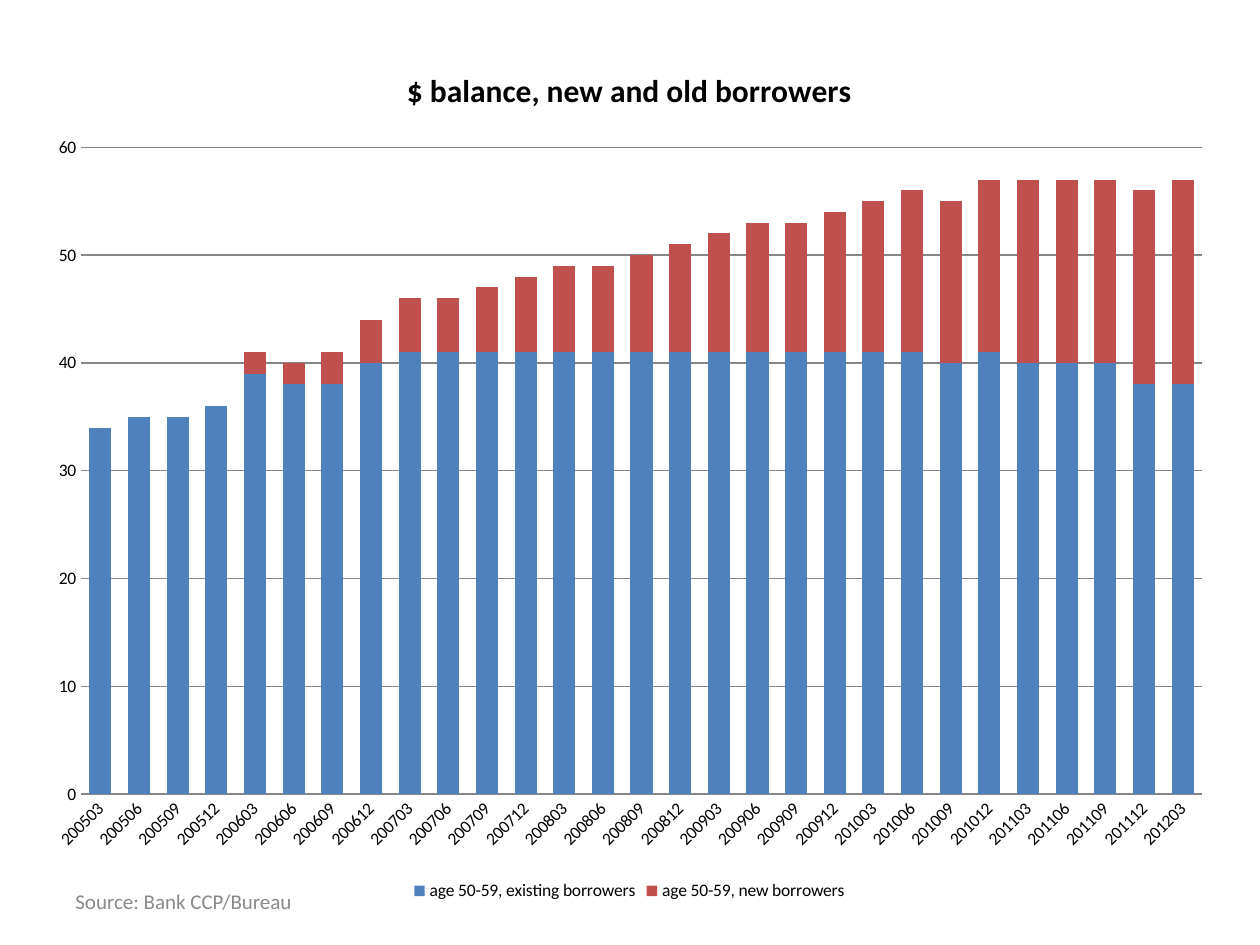
from typing import NamedTuple, Optional

from pptx import Presentation
from pptx.chart.data import CategoryChartData
from pptx.dml.color import RGBColor
from pptx.enum.chart import XL_CHART_TYPE as ChartType
from pptx.enum.chart import XL_LEGEND_POSITION as LegendPosition
from pptx.enum.chart import XL_TICK_MARK as TickMark
from pptx.enum.text import MSO_ANCHOR as Anchor
from pptx.util import Inches, Pt

FONT = "Calibri"
BLACK = RGBColor(0x00, 0x00, 0x00)
GREY = RGBColor(0x89, 0x89, 0x89)
AXIS_GREY = RGBColor(0x86, 0x86, 0x86)
BLUE = RGBColor(0x4F, 0x81, 0xBD)
RED = RGBColor(0xC0, 0x50, 0x4D)


class Borrowers(NamedTuple):
    name: str
    balances: list[Optional[int]]
    color: RGBColor


# Quarter ends from March 2005 to March 2012
QUARTERS = [f"{year}{month:02}" for year in range(2005, 2013)
            for month in (3, 6, 9, 12)][:29]

GROUPS = [
    Borrowers("age 50-59, existing borrowers",
              [34, 35, 35, 36, 39, 38, 38, 40] + [41] * 14
              + [40, 41, 40, 40, 40, 38, 38], BLUE),
    Borrowers("age 50-59, new borrowers",
              [None] * 4 + [2, 2, 3, 4, 5, 5, 6, 7, 8, 8, 9, 10, 11, 12, 12,
                            13, 14, 15, 15, 16, 17, 17, 17, 18, 19], RED),
]


def write(frame, text: str, *, size: float, color: RGBColor = BLACK,
          bold: bool = False) -> None:
    run = frame.paragraphs[0].add_run()
    run.text = text
    run.font.name = FONT
    run.font.size = Pt(size)
    run.font.bold = bold
    run.font.color.rgb = color


def add_source(slide, text: str) -> None:
    source = slide.shapes.add_textbox(Inches(0.5), Inches(6.95),
                                      Inches(2.33), Inches(0.4))
    source.text_frame.word_wrap = True
    source.text_frame.vertical_anchor = Anchor.MIDDLE
    write(source.text_frame, text, size=12, color=GREY)


def add_balance_chart(slide, title: str, groups: list[Borrowers]) -> None:
    data = CategoryChartData(number_format="0")
    data.categories = QUARTERS
    for group in groups:
        data.add_series(group.name, group.balances)
    chart = slide.shapes.add_chart(
        ChartType.COLUMN_STACKED, Inches(0.26), Inches(0.31),
        Inches(9.47), Inches(6.88), data).chart
    chart.font.name = FONT
    chart.font.size = Pt(10)
    chart.font.color.rgb = BLACK

    # Title and legend
    chart.has_title = True
    write(chart.chart_title.text_frame, title, size=18, bold=True)
    chart.chart_title.include_in_layout = False
    chart.has_legend = True
    chart.legend.position = LegendPosition.BOTTOM
    chart.legend.include_in_layout = False

    # Axes
    quarters, balance = chart.category_axis, chart.value_axis
    for axis in (quarters, balance):
        axis.major_tick_mark = TickMark.NONE
        axis.minor_tick_mark = TickMark.NONE
    quarters.format.line.color.rgb = AXIS_GREY
    balance.format.line.fill.background()
    balance.minimum_scale, balance.maximum_scale = 0, 60
    balance.major_unit = 10
    balance.has_major_gridlines = True
    balance.major_gridlines.format.line.color.rgb = AXIS_GREY

    # Columns
    columns = chart.plots[0]
    columns.gap_width = 75
    columns.overlap = 100
    columns.vary_by_categories = False
    for series, group in zip(columns.series, groups):
        series.format.fill.solid()
        series.format.fill.fore_color.rgb = group.color


def main() -> None:
    deck = Presentation()
    deck.slide_width, deck.slide_height = Inches(10), Inches(7.5)
    slide = deck.slides.add_slide(deck.slide_layouts[6])
    add_source(slide, "Source: Bank CCP/Bureau")
    add_balance_chart(slide, "$ balance, new and old borrowers", GROUPS)
    deck.save("out.pptx")


if __name__ == "__main__":
    main()
